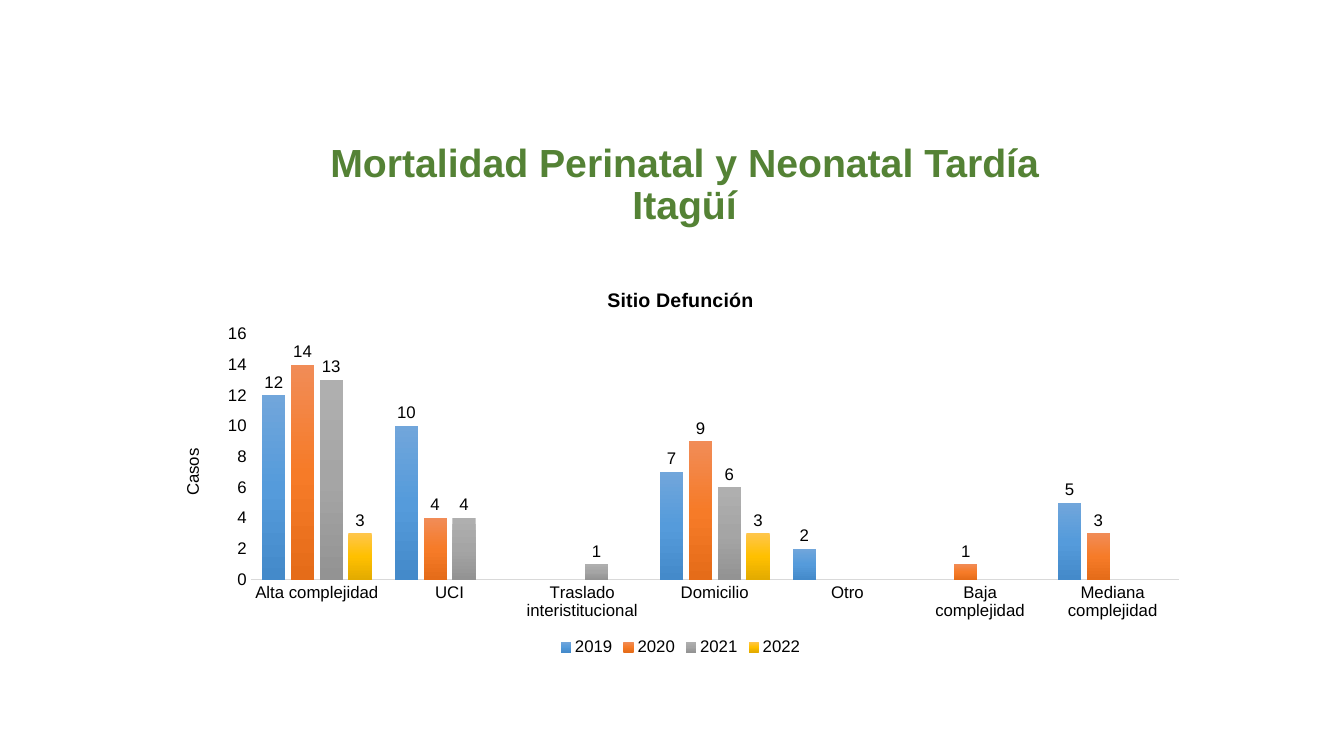
from copy import deepcopy
from dataclasses import dataclass

from pptx import Presentation
from pptx.chart.data import CategoryChartData
from pptx.dml.color import RGBColor
from pptx.enum.chart import XL_CHART_TYPE, XL_LABEL_POSITION, XL_LEGEND_POSITION, XL_TICK_MARK
from pptx.enum.text import MSO_ANCHOR, PP_ALIGN
from pptx.oxml.ns import qn
from pptx.util import Inches, Pt

COLUMNS = XL_CHART_TYPE.COLUMN_CLUSTERED
OUTSIDE_END = XL_LABEL_POSITION.OUTSIDE_END
LEGEND_BOTTOM = XL_LEGEND_POSITION.BOTTOM
NO_TICK = XL_TICK_MARK.NONE
BOTTOM = MSO_ANCHOR.BOTTOM
CENTER = PP_ALIGN.CENTER


@dataclass(frozen=True)
class Theme:
    font: str = "Arial"
    heading: str = "548235"
    text: str = "000000"
    axis: str = "D9D9D9"
    heading_size: int = 28
    chart_title_size: int = 14
    chart_size: int = 12
    gradients: tuple = (
        ("71A6DB", "559BDB", "448ACA"),
        ("F18C57", "F67B28", "E56C19"),
        ("AFAFAF", "A5A5A5", "939393"),
        ("FFC64B", "FFC000", "E3AB00"),
    )


SITES = [
    "Alta complejidad", "UCI", "Traslado interistitucional", "Domicilio",
    "Otro", "Baja complejidad", "Mediana complejidad",
]
DEATHS = {
    "2019": (12, 10, None, 7, 2, None, 5),
    "2020": (14, 4, None, 9, None, 1, 3),
    "2021": (13, 4, 1, 6, None, None, None),
    "2022": (3, None, None, 3, None, None, None),
}


class SlideBuilder:
    def __init__(self, slide, theme):
        self.slide = slide
        self.theme = theme

    def style_font(self, font, size, color, bold=False):
        font.name = self.theme.font
        font.size = Pt(size)
        font.bold = bold
        font.color.rgb = RGBColor.from_string(color)

    def heading(self, lines, left, top, width, height):
        shape = self.slide.shapes.add_textbox(
            Inches(left), Inches(top), Inches(width), Inches(height))
        frame = shape.text_frame
        frame.word_wrap = True
        frame.vertical_anchor = BOTTOM
        paragraph = frame.paragraphs[0]
        paragraph.alignment = CENTER
        paragraph.line_spacing = 0.9
        for index, line in enumerate(lines):
            if index:
                paragraph.add_line_break()
            run = paragraph.add_run()
            run.text = line
            self.style_font(run.font, self.theme.heading_size, self.theme.heading, True)

    def chart_caption(self, owner, text, size, bold):
        run = owner.text_frame.paragraphs[0].add_run()
        run.text = text
        self.style_font(run.font, size, self.theme.text, bold)

    def gradient(self, series, colors):
        fill = series.format.fill
        fill.gradient()
        fill.gradient_angle = 270
        stop_list = series._element.find(".//" + qn("a:gsLst"))
        stop_list.insert(1, deepcopy(stop_list[0]))
        for index, color in enumerate(colors):
            stop = fill.gradient_stops[index]
            stop.position = index / 2
            stop.color.rgb = RGBColor.from_string(color)

    def value_labels(self, series):
        labels = series.data_labels
        labels.show_value = True
        labels.position = OUTSIDE_END
        self.style_font(labels.font, self.theme.chart_size, self.theme.text)

    def axis(self, axis):
        axis.has_major_gridlines = False
        axis.major_tick_mark = NO_TICK
        axis.minor_tick_mark = NO_TICK
        self.style_font(axis.tick_labels.font, self.theme.chart_size, self.theme.text)

    def column_chart(self, title, value_title, categories, values, left, top, width, height):
        theme = self.theme
        data = CategoryChartData()
        data.categories = categories
        for name, numbers in values.items():
            data.add_series(name, numbers)
        chart = self.slide.shapes.add_chart(
            COLUMNS, Inches(left), Inches(top), Inches(width), Inches(height), data).chart
        self.style_font(chart.font, theme.chart_size, theme.text)
        chart.has_title = True
        self.chart_caption(chart.chart_title, title, theme.chart_title_size, True)
        chart.chart_title.include_in_layout = False

        chart.has_legend = True
        chart.legend.position = LEGEND_BOTTOM
        chart.legend.include_in_layout = False
        self.style_font(chart.legend.font, theme.chart_size, theme.text)

        self.axis(chart.category_axis)
        line = chart.category_axis.format.line
        line.width = Pt(1)
        line.color.rgb = RGBColor.from_string(theme.axis)

        value_axis = chart.value_axis
        self.axis(value_axis)
        value_axis.minimum_scale = 0
        value_axis.maximum_scale = 16
        value_axis.major_unit = 2
        value_axis.format.line.fill.background()
        self.chart_caption(value_axis.axis_title, value_title, theme.chart_size, False)

        plot = chart.plots[0]
        plot.vary_by_categories = False
        plot.gap_width = 100
        plot.overlap = -24
        for series, colors in zip(plot.series, theme.gradients):
            self.gradient(series, colors)
            self.value_labels(series)


def main():
    presentation = Presentation()
    presentation.slide_width = Inches(13.33)
    presentation.slide_height = Inches(7.5)
    slide = presentation.slides.add_slide(presentation.slide_layouts[6])
    builder = SlideBuilder(slide, Theme())
    builder.heading(
        ["Mortalidad Perinatal y Neonatal Tardía", "Itagüí"], 1.55, 1.31, 10.48, 1)
    builder.column_chart("Sitio Defunción", "Casos", SITES, DEATHS, 1.6, 2.68, 10.3, 3.87)
    presentation.save("out.pptx")


if __name__ == "__main__":
    main()
